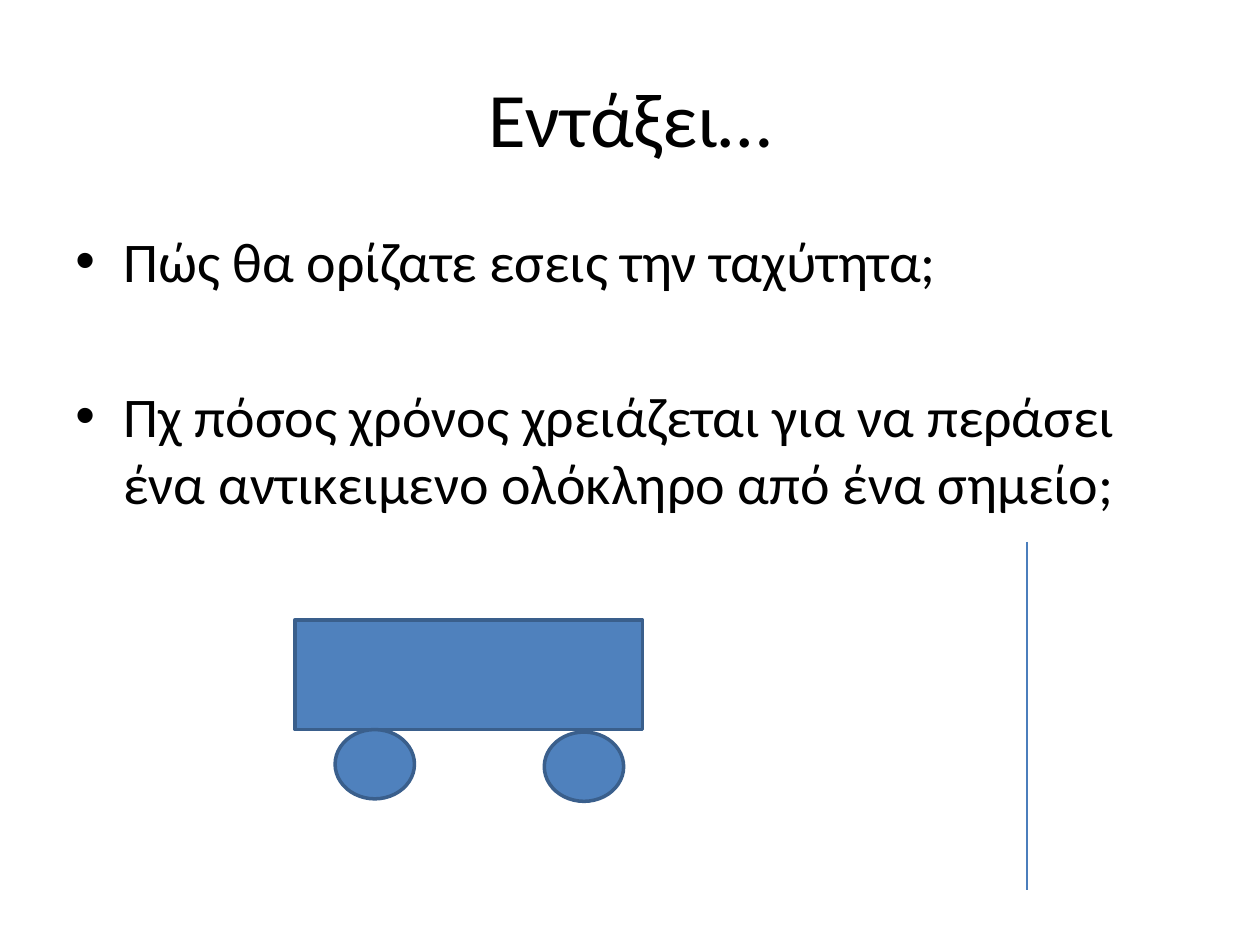
from dataclasses import dataclass

from lxml.etree import SubElement
from pptx import Presentation
from pptx.dml.color import RGBColor
from pptx.enum.shapes import MSO_CONNECTOR, MSO_SHAPE
from pptx.enum.text import MSO_ANCHOR, PP_ALIGN
from pptx.oxml.ns import qn
from pptx.util import Inches, Pt


@dataclass(frozen=True)
class Theme:
    font: str = "Calibri"
    title_size: int = 44
    body_size: int = 32
    question_gap: int = 50
    text: RGBColor = RGBColor(0x00, 0x00, 0x00)
    fill: RGBColor = RGBColor(0x4F, 0x81, 0xBD)
    outline: RGBColor = RGBColor(0x3A, 0x5F, 0x8C)
    marker: RGBColor = RGBColor(0x4B, 0x7E, 0xBC)


THEME = Theme()


def add_text_box(page, left, top, width, height, anchor):
    box = page.shapes.add_textbox(Inches(left), Inches(top), Inches(width), Inches(height))
    box.text_frame.word_wrap = True
    box.text_frame.vertical_anchor = anchor
    return box.text_frame


def add_span(para, text, size):
    span = para.add_run()
    span.text = text
    span.font.name = THEME.font
    span.font.size = Pt(size)
    span.font.color.rgb = THEME.text


def add_title(page, text):
    frame = add_text_box(page, 0.5, 0.3, 9, 1.25, MSO_ANCHOR.MIDDLE)
    para = frame.paragraphs[0]
    para.alignment = PP_ALIGN.CENTER
    add_span(para, text, THEME.title_size)


def set_bullet(para, indent):
    properties = para._p.get_or_add_pPr()
    properties.set("marL", str(Inches(indent)))
    properties.set("indent", str(-Inches(indent)))
    SubElement(properties, qn("a:buFont"), typeface="Arial")
    SubElement(properties, qn("a:buChar"), char="•")


def add_questions(page, questions):
    frame = add_text_box(page, 0.5, 1.75, 9, 4.95, MSO_ANCHOR.TOP)
    for index, question in enumerate(questions):
        para = frame.add_paragraph() if index else frame.paragraphs[0]
        set_bullet(para, 0.38)
        if index:
            para.space_before = Pt(THEME.question_gap)
        add_span(para, question, THEME.body_size)


def add_cart_part(page, kind, left, top, width, height):
    part = page.shapes.add_shape(
        kind, Inches(left), Inches(top), Inches(width), Inches(height))
    part.shadow.inherit = False
    part.fill.solid()
    part.fill.fore_color.rgb = THEME.fill
    part.line.color.rgb = THEME.outline
    part.line.width = Pt(2)


def add_marker_line(page, x, top, bottom):
    line = page.shapes.add_connector(
        MSO_CONNECTOR.STRAIGHT, Inches(x), Inches(top), Inches(x), Inches(bottom))
    line.line.color.rgb = THEME.marker
    line.line.width = Pt(0.75)
    SubElement(line._element.spPr, qn("a:effectLst"))


def main():
    deck = Presentation()
    deck.slide_width, deck.slide_height = Inches(10), Inches(7.5)
    page = deck.slides.add_slide(deck.slide_layouts[6])

    # Title and questions
    add_title(page, "Εντάξει…")
    add_questions(page, [
        "Πώς θα ορίζατε εσεις την ταχύτητα;",
        "Πχ πόσος χρόνος χρειάζεται για να περάσει ένα αντικειμενο ολόκληρο από ένα σημείο;",
    ])

    # Cart: body and two wheels
    add_cart_part(page, MSO_SHAPE.RECTANGLE, 2.34, 4.92, 2.76, 0.87)
    for left, top in ((2.66, 5.79), (4.32, 5.81)):
        add_cart_part(page, MSO_SHAPE.OVAL, left, top, 0.63, 0.55)

    # Point that the cart passes
    add_marker_line(page, 8.15, 4.3, 7.06)

    deck.save("out.pptx")


if __name__ == "__main__":
    main()
